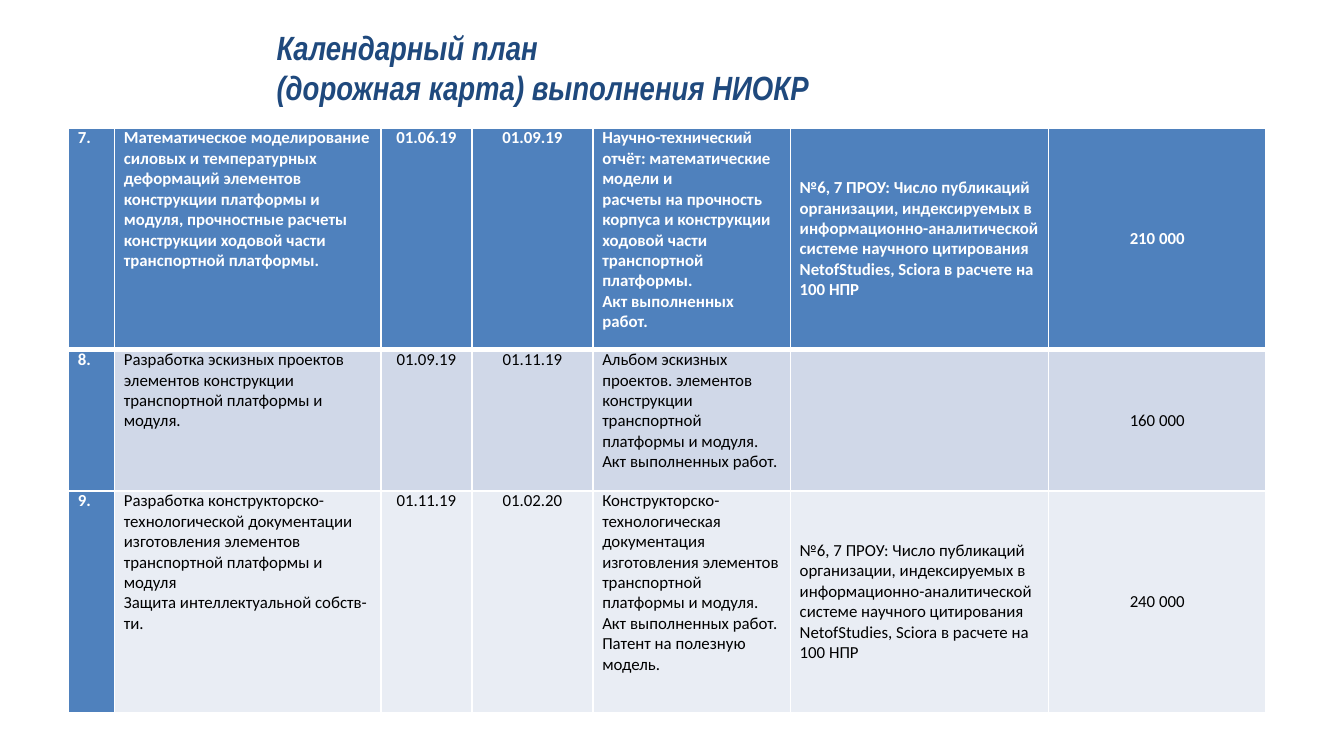
from lxml import etree
from pptx import Presentation
from pptx.dml.color import RGBColor
from pptx.enum import text
from pptx.oxml import ns
from pptx.util import Pt

WHITE = RGBColor(0xFF, 0xFF, 0xFF)
BLACK = RGBColor(0, 0, 0)
NAVY = RGBColor(0x1F, 0x49, 0x7D)
BLUE = RGBColor(0x4F, 0x81, 0xBD)
BAND = RGBColor(0xD0, 0xD8, 0xE8)
PALE = RGBColor(0xE9, 0xED, 0xF4)

TITLE = "Календарный план\n(дорожная карта) выполнения НИОКР"
ACT = "Акт выполненных работ."
INDICATOR = ("№6, 7 ПРОУ: Число публикаций организации, индексируемых в "
             "информационно-аналитической системе научного цитирования "
             "NetofStudies, Sciora в расчете на 100 НПР")
STAGES = [
    (["7."],
     ["Математическое моделирование силовых и температурных деформаций элементов "
      "конструкции платформы и модуля, прочностные расчеты конструкции ходовой "
      "части транспортной платформы."],
     ["01.06.19"], ["01.09.19"],
     ["Научно-технический отчёт: математические модели и",
      "расчеты на прочность корпуса и конструкции ходовой части транспортной платформы.",
      ACT],
     [INDICATOR], ["210 000"]),
    (["8."],
     ["Разработка эскизных проектов элементов конструкции транспортной платформы и модуля."],
     ["01.09.19"], ["01.11.19"],
     ["Альбом эскизных проектов. элементов конструкции транспортной платформы и модуля.",
      ACT],
     [], ["160 000"]),
    (["9."],
     ["Разработка конструкторско-технологической документации изготовления элементов "
      "транспортной платформы и модуля",
      "Защита интеллектуальной собств-ти."],
     ["01.11.19"], ["01.02.20"],
     ["Конструкторско-технологическая документация изготовления элементов "
      "транспортной платформы и модуля.",
      ACT, "Патент на полезную модель."],
     [INDICATOR], ["240 000"]),
]
COL_WIDTHS = [24.6, 142.6, 48.9, 64.8, 105.8, 138.2, 116.6]
ROW_HEIGHTS = [118.8, 75.6, 118.8]
ROW_FILLS = [BLUE, BAND, PALE]
CENTERED = {2, 3, 6}
MIDDLE = {5, 6}


def write(tf, paragraphs, size=9, font="Calibri", color=BLACK, bold=False,
          italic=False, align=text.PP_ALIGN.LEFT):
    for i, content in enumerate(paragraphs):
        p = tf.add_paragraph() if i else tf.paragraphs[0]
        p.text = content
        p.alignment = align
        for r in p.runs:
            r.font.size = Pt(size)
            r.font.name = font
            r.font.color.rgb = color
            r.font.bold = bold
            r.font.italic = italic


def add_borders(cell, **widths):
    tcPr = cell._tc.get_or_add_tcPr()
    for side, width in widths.items():
        ln = etree.SubElement(tcPr, ns.qn(f"a:ln{side}"), w=str(Pt(width)))
        fill = etree.SubElement(ln, ns.qn("a:solidFill"))
        etree.SubElement(fill, ns.qn("a:srgbClr"), val=str(WHITE))


prs = Presentation()
prs.slide_width, prs.slide_height = Pt(720), Pt(405)
s = prs.slides.add_slide(prs.slide_layouts[6])

table = s.shapes.add_table(len(STAGES), len(COL_WIDTHS), Pt(36.8), Pt(68.6),
                           Pt(sum(COL_WIDTHS)), Pt(sum(ROW_HEIGHTS))).table
table.first_col = True
for column, width in zip(table.columns, COL_WIDTHS):
    column.width = Pt(width)
for row, height in zip(table.rows, ROW_HEIGHTS):
    row.height = Pt(height)

for i, stage in enumerate(STAGES):
    for j, paragraphs in enumerate(stage):
        cell = table.cell(i, j)
        header = i == 0 or j == 0
        cell.margin_left = cell.margin_right = Pt(5)
        cell.margin_top = cell.margin_bottom = 0
        cell.vertical_anchor = text.MSO_ANCHOR.MIDDLE if j in MIDDLE else text.MSO_ANCHOR.TOP
        add_borders(cell, L=1, R=1, T=3 if i == 1 else 1, B=3 if i == 0 else 1)
        cell.fill.solid()
        cell.fill.fore_color.rgb = BLUE if header else ROW_FILLS[i]
        write(cell.text_frame, paragraphs, color=WHITE if header else BLACK, bold=header,
              align=text.PP_ALIGN.CENTER if j in CENTERED else text.PP_ALIGN.LEFT)

tf = s.shapes.add_textbox(Pt(141.1), Pt(10.8), Pt(360), Pt(51.1)).text_frame
tf.word_wrap = True
write(tf, [TITLE], size=18, font="Arial Narrow", color=NAVY, bold=True, italic=True)

prs.save("out.pptx")
